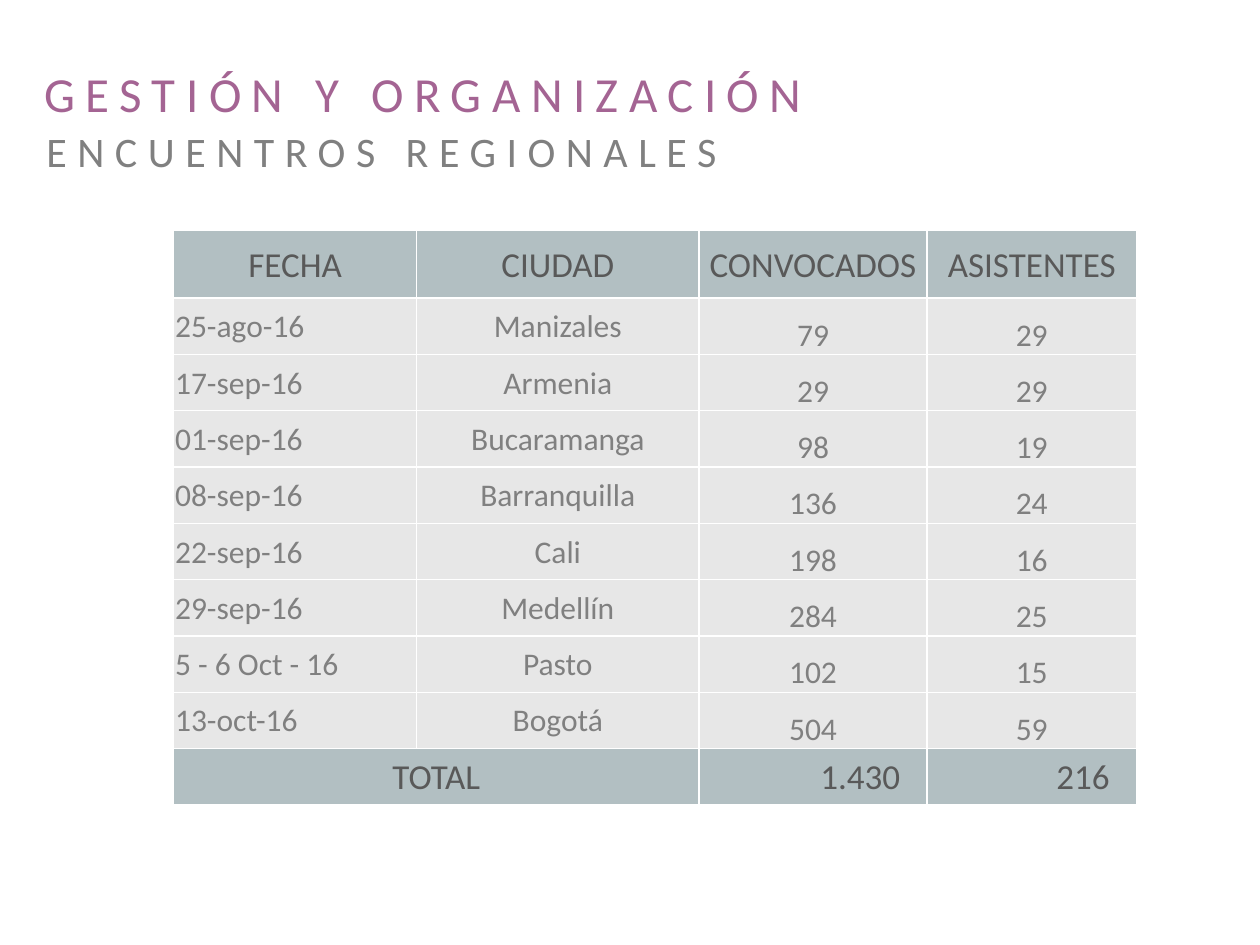
from dataclasses import dataclass

from lxml import etree
from pptx import Presentation
from pptx.dml.color import RGBColor
from pptx.enum.text import MSO_ANCHOR as Anchor, MSO_AUTO_SIZE as AutoSize, PP_ALIGN as Align
from pptx.oxml.ns import qn
from pptx.util import Cm, Pt


@dataclass(frozen=True)
class Theme:
    font: str = "Calibri"
    purple: RGBColor = RGBColor(0xA4, 0x64, 0x93)
    gray: RGBColor = RGBColor(0x80, 0x80, 0x80)
    dark: RGBColor = RGBColor(0x59, 0x59, 0x59)
    band: RGBColor = RGBColor(0xB2, 0xBF, 0xC2)
    body: RGBColor = RGBColor(0xE7, 0xE7, 0xE7)
    border: str = "FFFFFF"
    title_size: Pt = Pt(28)
    subtitle_size: Pt = Pt(24)
    band_size: Pt = Pt(20)
    body_size: Pt = Pt(18)


theme = Theme()


def write(text_frame, text, size, color, align):
    """Put one formatted paragraph in a text frame and return it."""
    text_frame.text = text
    paragraph = text_frame.paragraphs[0]
    paragraph.alignment = align
    font = paragraph.font
    font.name, font.size, font.bold = theme.font, size, False
    font.color.rgb = color
    return paragraph


def add_borders(cell):
    """Draw a 1 pt line on each side of a table cell."""
    properties = cell._tc.get_or_add_tcPr()
    for side in ("lnL", "lnR", "lnT", "lnB"):
        line = etree.SubElement(properties, qn(f"a:{side}"), w=str(Pt(1)))
        fill = etree.SubElement(line, qn("a:solidFill"))
        etree.SubElement(fill, qn("a:srgbClr"), val=theme.border)


presentation = Presentation()
presentation.slide_width, presentation.slide_height = Cm(25.4), Cm(19.05)
slide = presentation.slides.add_slide(presentation.slide_layouts[5])

# Title and subtitle
title = slide.shapes.title
title.left, title.top, title.width, title.height = Cm(0.89), Cm(1.42), Cm(16), Cm(1.07)
subtitle = slide.shapes.add_textbox(Cm(-0.51), Cm(2.49), Cm(16.41), Cm(1.07))
headings = [
    (title, "GESTIÓN Y ORGANIZACIÓN", theme.title_size, theme.purple, Align.LEFT),
    (subtitle, "ENCUENTROS REGIONALES", theme.subtitle_size, theme.gray, Align.CENTER),
]
for shape, text, size, color, align in headings:
    frame = shape.text_frame
    frame.word_wrap = True
    frame.auto_size = AutoSize.NONE
    frame.vertical_anchor = Anchor.TOP
    frame.margin_left = frame.margin_right = frame.margin_top = frame.margin_bottom = 0
    paragraph = write(frame, text, size, color, align)
    paragraph.line_spacing = Pt(29.9)
    paragraph.runs[0]._r.get_or_add_rPr().set("spc", "600")

# Table of meetings
rows = [
    ("FECHA", "CIUDAD", "CONVOCADOS", "ASISTENTES"),
    ("25-ago-16", "Manizales", "79", "29"),
    ("17-sep-16", "Armenia", "29", "29"),
    ("01-sep-16", "Bucaramanga", "98", "19"),
    ("08-sep-16", "Barranquilla", "136", "24"),
    ("22-sep-16", "Cali", "198", "16"),
    ("29-sep-16", "Medellín", "284", "25"),
    ("5 - 6 Oct - 16", "Pasto", "102", "15"),
    ("13-oct-16", "Bogotá", "504", "59"),
    ("TOTAL", "", "1.430", "216"),
]
column_widths = [Cm(4.9), Cm(5.69), Cm(4.6), Cm(4.22)]
header_height, row_height = Cm(1.36), Cm(1.135)
last = len(rows) - 1
table = slide.shapes.add_table(
    len(rows), len(column_widths), Cm(3.5), Cm(4.65),
    sum(column_widths), header_height + last * row_height,
).table
table.first_row = table.horz_banding = False
for column, width in zip(table.columns, column_widths):
    column.width = width

for r, values in enumerate(rows):
    table.rows[r].height = row_height if r else header_height
    is_band = r in (0, last)
    for c, value in enumerate(values):
        cell = table.cell(r, c)
        cell.margin_left = cell.margin_right = cell.margin_top = Cm(0.03)
        cell.margin_bottom = 0
        is_number = c >= 2
        cell.vertical_anchor = Anchor.BOTTOM if is_number and not is_band else Anchor.MIDDLE
        align = Align.LEFT if c == 0 and not is_band else Align.CENTER
        if r == last and is_number:
            align = Align.RIGHT
            cell.margin_right = Cm(0.54)
        add_borders(cell)
        cell.fill.solid()
        cell.fill.fore_color.rgb = theme.band if is_band else theme.body
        if value:
            write(cell.text_frame, value,
                  theme.band_size if is_band else theme.body_size,
                  theme.dark if is_band else theme.gray, align)

# The total label spans date and city
table.cell(last, 0).merge(table.cell(last, 1))

presentation.save("out.pptx")
